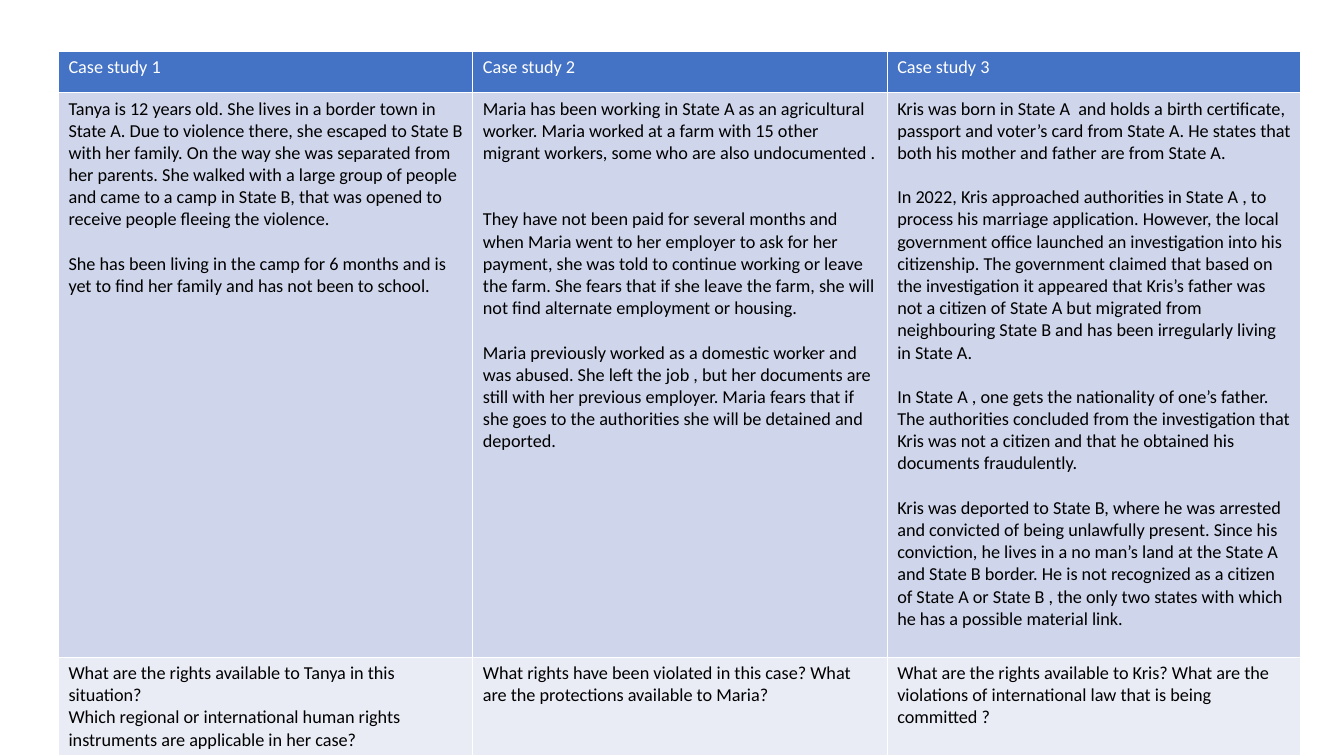
from pptx import Presentation
from pptx.dml.color import RGBColor
from pptx.oxml.ns import qn
from pptx.util import Inches, Pt
from lxml.etree import SubElement

WHITE = RGBColor(0xFF, 0xFF, 0xFF)
BLACK = RGBColor(0x00, 0x00, 0x00)
HEADER_BLUE = RGBColor(0x44, 0x72, 0xC4)
STORY_BLUE = RGBColor(0xCF, 0xD5, 0xEA)
QUESTION_BLUE = RGBColor(0xE9, 0xEB, 0xF5)
FONT = "Calibri"
TEXT_SIZE = 13
LINE_PITCH = 15.85
BORDER_WIDTH = 1

COLUMN_WIDTHS = [4.11, 4.11, 4.1]
ROW_HEIGHTS = [0.41, 5.6, 0.87]
ROW_COLORS = [(HEADER_BLUE, WHITE), (STORY_BLUE, BLACK), (QUESTION_BLUE, BLACK)]

HEADERS = [[(0, f"Case study {number}")] for number in (1, 2, 3)]

STORIES = [
    [
        (0, "Tanya is 12 years old. She lives in a border town in State A. Due to violence there, she escaped to State B with her family. On the way she was separated from her parents. She walked with a large group of people and came to a camp in State B, that was opened to receive people fleeing the violence."),
        (1, "She has been living in the camp for 6 months and is yet to find her family and has not been to school."),
    ],
    [
        (0, "Maria has been working in State A as an agricultural worker. Maria worked at a farm with 15 other migrant workers, some who are also undocumented ."),
        (2, "They have not been paid for several months and when Maria went to her employer to ask for her payment, she was told to continue working or leave the farm. She fears that if she leave the farm, she will not find alternate employment or housing."),
        (1, "Maria previously worked as a domestic worker and was abused. She left the job , but her documents are still with her previous employer. Maria fears that if she goes to the authorities she will be detained and deported."),
    ],
    [
        (0, "Kris was born in State A  and holds a birth certificate, passport and voter’s card from State A. He states that both his mother and father are from State A."),
        (1, "In 2022, Kris approached authorities in State A , to process his marriage application. However, the local government office launched an investigation into his citizenship. The government claimed that based on the investigation it appeared that Kris’s father was not a citizen of State A but migrated from neighbouring State B and has been irregularly living in State A."),
        (1, "In State A , one gets the nationality of one’s father. The authorities concluded from the investigation that Kris was not a citizen and that he obtained his documents fraudulently."),
        (1, "Kris was deported to State B, where he was arrested and convicted of being unlawfully present. Since his conviction, he lives in a no man’s land at the State A and State B border. He is not recognized as a citizen of State A or State B , the only two states with which he has a possible material link."),
    ],
]

QUESTIONS = [
    [
        (0, "What are the rights available to Tanya in this situation?"),
        (0, "Which regional or international human rights instruments are applicable in her case?"),
    ],
    [(0, "What rights have been violated in this case? What are the protections available to Maria?")],
    [(0, "What are the rights available to Kris? What are the violations of international law that is being committed ?")],
]


def draw_borders(cell):
    properties = cell._tc.get_or_add_tcPr()
    for tag in ("a:lnL", "a:lnR", "a:lnT", "a:lnB"):
        line = SubElement(properties, qn(tag), w=str(Pt(BORDER_WIDTH)))
        fill = SubElement(line, qn("a:solidFill"))
        SubElement(fill, qn("a:srgbClr"), val=str(WHITE))


def fill_cell(cell, passages, fill_color, text_color):
    draw_borders(cell)
    cell.fill.solid()
    cell.fill.fore_color.rgb = fill_color
    frame = cell.text_frame
    for index, (gap_lines, text) in enumerate(passages):
        para = frame.add_paragraph() if index else frame.paragraphs[0]
        para.text = text
        if gap_lines:
            para.space_before = Pt(gap_lines * LINE_PITCH)
        para.font.name = FONT
        para.font.size = Pt(TEXT_SIZE)
        para.font.color.rgb = text_color
        para.font.bold = False


def place_case_table(page, left, top, width, height):
    rows = [HEADERS, STORIES, QUESTIONS]
    table = page.shapes.add_table(
        len(rows), len(COLUMN_WIDTHS), Inches(left), Inches(top), Inches(width), Inches(height)
    ).table
    for column, column_width in zip(table.columns, COLUMN_WIDTHS):
        column.width = Inches(column_width)
    for row, row_height, contents, colors in zip(table.rows, ROW_HEIGHTS, rows, ROW_COLORS):
        row.height = Inches(row_height)
        for cell, passages in zip(row.cells, contents):
            fill_cell(cell, passages, *colors)


def main():
    deck = Presentation()
    deck.slide_width, deck.slide_height = Inches(13.33), Inches(7.5)
    page = deck.slides.add_slide(deck.slide_layouts.get_by_name("Blank"))
    place_case_table(page, 0.58, 0.51, sum(COLUMN_WIDTHS), sum(ROW_HEIGHTS))
    deck.save("out.pptx")


if __name__ == "__main__":
    main()
